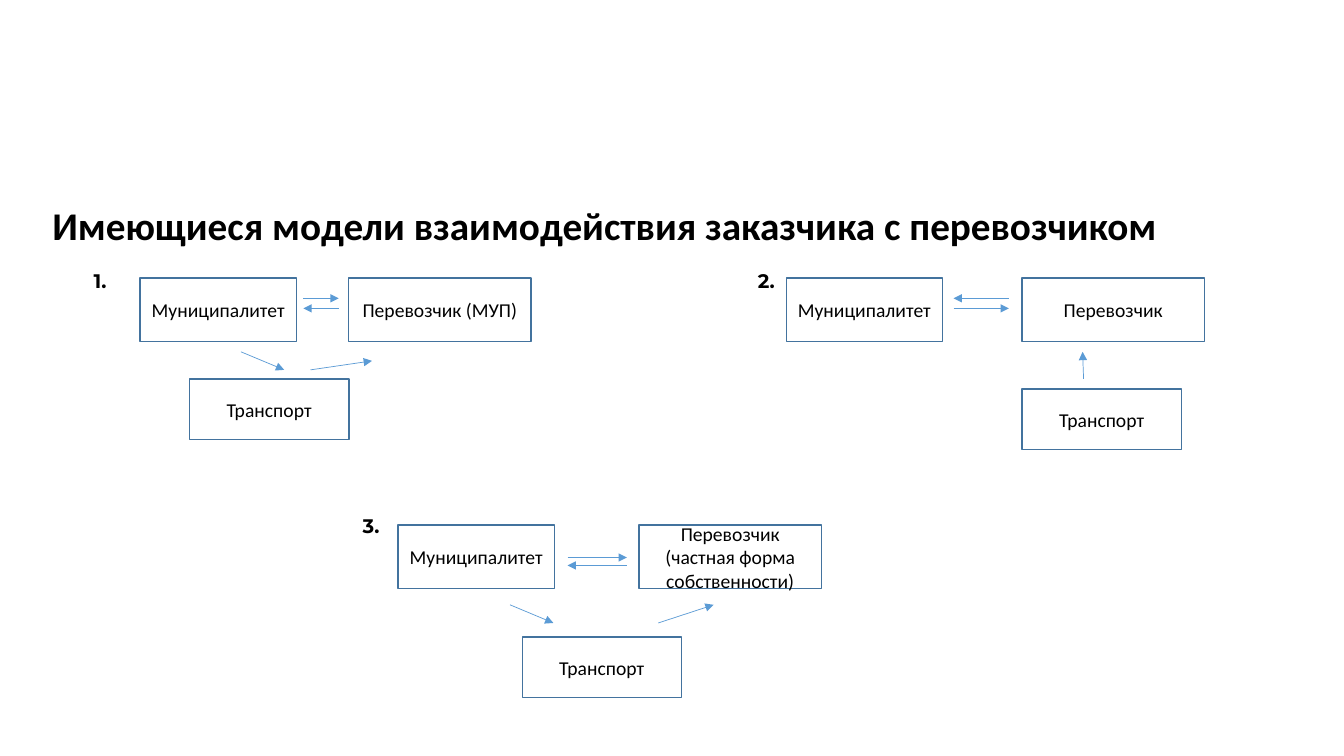
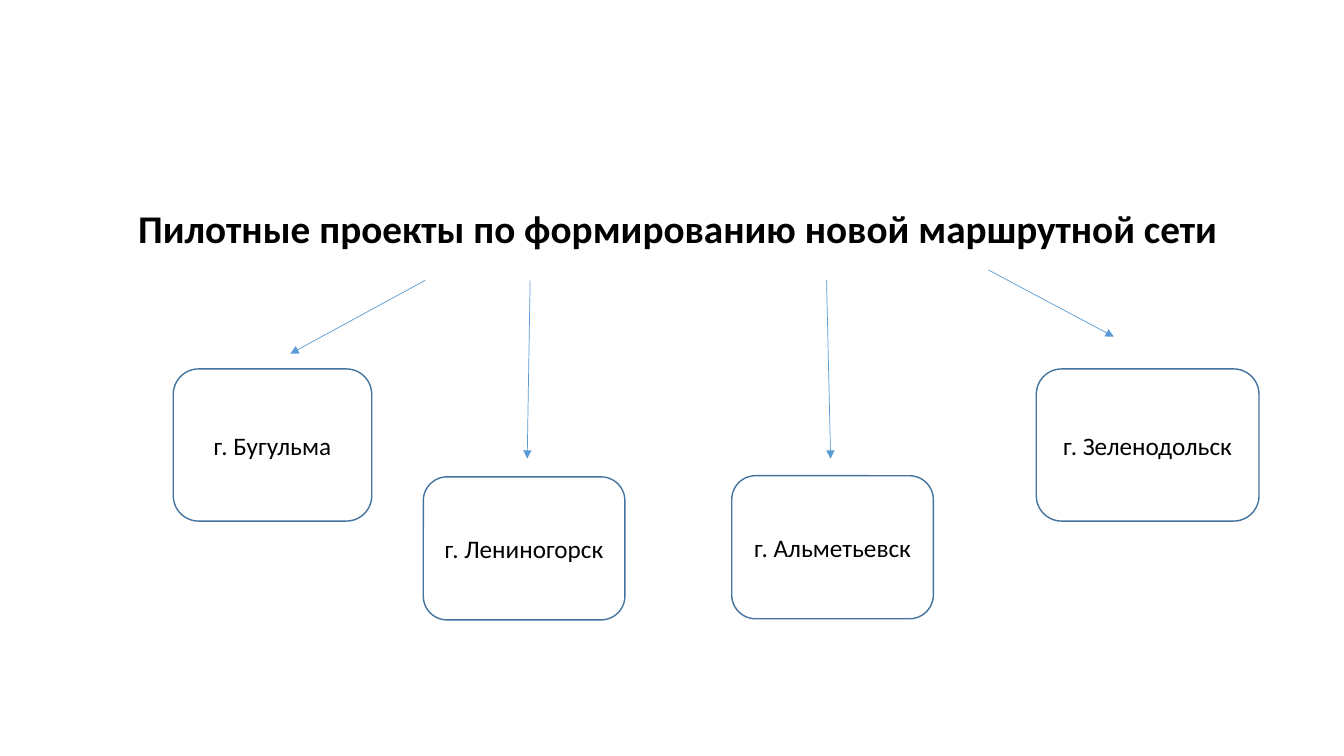
from dataclasses import dataclass

from lxml.etree import SubElement
from pptx import Presentation
from pptx.dml.color import RGBColor
from pptx.enum.shapes import MSO_CONNECTOR, MSO_SHAPE
from pptx.enum.text import MSO_ANCHOR, MSO_AUTO_SIZE, PP_ALIGN
from pptx.oxml.ns import qn
from pptx.presentation import Presentation as Deck
from pptx.slide import Slide
from pptx.text.text import TextFrame
from pptx.util import Pt


@dataclass(frozen=True)
class Theme:
    text: RGBColor = RGBColor(0x00, 0x00, 0x00)
    box_fill: RGBColor = RGBColor(0xFF, 0xFF, 0xFF)
    box_line: RGBColor = RGBColor(0x43, 0x73, 0x9E)
    arrow: RGBColor = RGBColor(0x5B, 0x9B, 0xD5)
    font: str = "Calibri"
    number_font: str = "Montserrat"
    title_size: float = 28
    city_size: float = 18
    model_size: float = 14
    box_line_width: float = 1
    arrow_width: float = 0.5


@dataclass(frozen=True)
class Area:
    left: float
    top: float
    width: float
    height: float


@dataclass(frozen=True)
class Arrow:
    start: tuple[float, float]
    end: tuple[float, float]


@dataclass(frozen=True)
class Model:
    number: str
    number_area: Area
    top: float
    customer_left: float
    carrier: str
    carrier_left: float
    transport_at: tuple[float, float]
    arrows: tuple[Arrow, ...]


@dataclass(frozen=True)
class City:
    name: str
    area: Area
    arrow: Arrow


def exchange(left: float, right: float, right_y: float, left_y: float) -> tuple[Arrow, Arrow]:
    return (
        Arrow((left, right_y), (right, right_y)),
        Arrow((right, left_y), (left, left_y)),
    )


THEME = Theme()
CUSTOMER_SIZE = (111.6, 45.4)
CARRIER_SIZE = (130.3, 45.4)
TRANSPORT_SIZE = (113.8, 43.2)

MODELS = (
    Model(
        "1.", Area(59.8, 188.6, 46.8, 24.5), 198.7, 100.1,
        "Перевозчик (МУП)", 249.1, (135.4, 270.7),
        exchange(216.7, 241.9, 213.1, 220.3)
        + (Arrow((172.1, 251.3), (203, 264.2)), Arrow((221.8, 264.2), (265.7, 257.8))),
    ),
    Model(
        "2.", Area(534.2, 188.6, 27.4, 24.5), 198.7, 561.6,
        "Перевозчик", 730.1, (730.1, 277.9),
        exchange(681.1, 720.7, 220.3, 213.1) + (Arrow((774, 270.7), (773.3, 251.3)),),
    ),
    Model(
        "3.", Area(252, 363.6, 27.4, 24.5), 375.1, 284.4,
        "Перевозчик (частная форма собственности)", 456.5, (373, 455),
        exchange(405.4, 447.8, 398.2, 403.9)
        + (Arrow((364.3, 432), (395.3, 445)), Arrow((470.2, 445), (509.8, 432))),
    ),
)

CITIES = (
    City("г. Бугульма", Area(123.8, 263.5, 141.8, 108.7), Arrow((303.8, 200.2), (207.4, 252.7))),
    City("г. Лениногорск", Area(302.4, 340.6, 144, 102.2), Arrow((378.7, 200.2), (376.6, 327.6))),
    City("г. Альметьевск", Area(522.7, 339.8, 144, 102.2), Arrow((590.4, 200.2), (593.3, 327.6))),
    City("г. Зеленодольск", Area(740.2, 263.5, 159.1, 108.7), Arrow((706.3, 193), (795.6, 240.5))),
)


def in_points(area: Area) -> tuple[Pt, Pt, Pt, Pt]:
    return Pt(area.left), Pt(area.top), Pt(area.width), Pt(area.height)


def write_text(
    text_frame: TextFrame, text: str, size: float, font_name: str = THEME.font,
    bold: bool = False, alignment: PP_ALIGN = PP_ALIGN.CENTER,
    anchor: MSO_ANCHOR = MSO_ANCHOR.MIDDLE,
) -> None:
    text_frame.text = text
    text_frame.word_wrap = True
    text_frame.auto_size = MSO_AUTO_SIZE.NONE
    text_frame.vertical_anchor = anchor
    paragraph = text_frame.paragraphs[0]
    paragraph.alignment = alignment
    for run in paragraph.runs:
        run.font.name = font_name
        run.font.size = Pt(size)
        run.font.bold = bold
        run.font.color.rgb = THEME.text


def add_titled_slide(presentation: Deck, text: str, area: Area, alignment: PP_ALIGN) -> Slide:
    slide = presentation.slides.add_slide(presentation.slide_layouts.get_by_name("Title Only"))
    title = slide.shapes.title
    title.left, title.top, title.width, title.height = in_points(area)
    write_text(title.text_frame, text, THEME.title_size, bold=True,
               alignment=alignment, anchor=MSO_ANCHOR.TOP)
    return slide


def add_box(slide: Slide, text: str, area: Area, size: float,
            outline: MSO_SHAPE = MSO_SHAPE.RECTANGLE) -> None:
    shape = slide.shapes.add_shape(outline, *in_points(area))
    shape.shadow.inherit = False
    shape.fill.solid()
    shape.fill.fore_color.rgb = THEME.box_fill
    shape.line.color.rgb = THEME.box_line
    shape.line.width = Pt(THEME.box_line_width)
    write_text(shape.text_frame, text, size)


def add_number(slide: Slide, text: str, area: Area) -> None:
    text_box = slide.shapes.add_textbox(*in_points(area))
    write_text(text_box.text_frame, text, THEME.model_size, THEME.number_font,
               bold=True, alignment=PP_ALIGN.LEFT, anchor=MSO_ANCHOR.TOP)


def add_arrow(slide: Slide, arrow: Arrow) -> None:
    points = [Pt(value) for value in arrow.start + arrow.end]
    connector = slide.shapes.add_connector(MSO_CONNECTOR.STRAIGHT, *points)
    connector.line.color.rgb = THEME.arrow
    connector.line.width = Pt(THEME.arrow_width)
    properties = connector.element.spPr
    SubElement(properties.find(qn("a:ln")), qn("a:tailEnd"), type="triangle")
    SubElement(properties, qn("a:effectLst"))


def add_model(slide: Slide, model: Model) -> None:
    add_number(slide, model.number, model.number_area)
    boxes = (
        ("Муниципалитет", Area(model.customer_left, model.top, *CUSTOMER_SIZE)),
        (model.carrier, Area(model.carrier_left, model.top, *CARRIER_SIZE)),
        ("Транспорт", Area(*model.transport_at, *TRANSPORT_SIZE)),
    )
    for text, area in boxes:
        add_box(slide, text, area, THEME.model_size)
    for arrow in model.arrows:
        add_arrow(slide, arrow)


def build_models_slide(presentation: Deck) -> None:
    slide = add_titled_slide(
        presentation, "Имеющиеся модели взаимодействия заказчика с перевозчиком",
        Area(30.2, 140.4, 879.1, 41), PP_ALIGN.LEFT,
    )
    for model in MODELS:
        add_model(slide, model)


def build_cities_slide(presentation: Deck) -> None:
    slide = add_titled_slide(
        presentation, "Пилотные проекты по формированию новой маршрутной сети",
        Area(25.9, 142.6, 915.8, 63.4), PP_ALIGN.CENTER,
    )
    for city in CITIES:
        add_arrow(slide, city.arrow)
        add_box(slide, city.name, city.area, THEME.city_size, MSO_SHAPE.ROUNDED_RECTANGLE)


def main() -> None:
    presentation = Presentation()
    presentation.slide_width = Pt(960)
    presentation.slide_height = Pt(540)
    build_models_slide(presentation)
    build_cities_slide(presentation)
    presentation.save("out.pptx")


if __name__ == "__main__":
    main()
